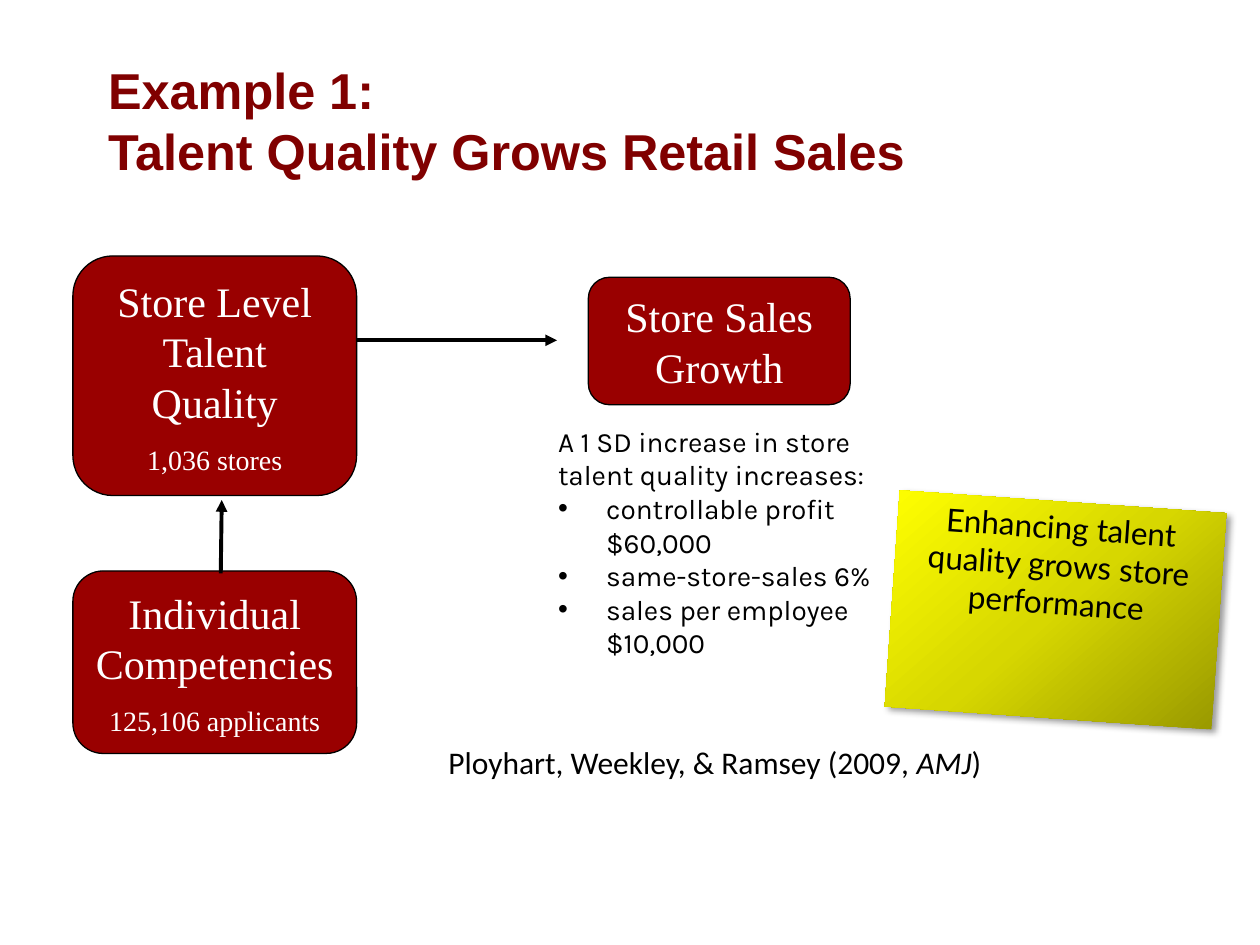
from lxml.etree import SubElement
from pptx import Presentation
from pptx.dml.color import RGBColor
from pptx.enum.shapes import MSO_CONNECTOR, MSO_SHAPE
from pptx.enum.text import MSO_ANCHOR, PP_ALIGN
from pptx.oxml import parse_xml
from pptx.oxml.ns import nsdecls, qn
from pptx.util import Cm, Pt

COLORS = {"title": "800000", "box": "990000", "light": "FFFFFF", "dark": "000000",
          "note_dark": "979700", "note_mid": "D7D700", "note_light": "FFFF00"}
FORMATS = {
    "title": {"name": "Arial", "size": Pt(28.8), "bold": True},
    "box": {"name": "Times New Roman", "size": Pt(24)},
    "sample": {"name": "Times New Roman", "size": Pt(16)},
    "effects": {"name": "Karla", "size": Pt(16)},
    "note": {"name": "Lato", "size": Pt(18)},
    "source": {"name": "Calibri", "size": Pt(18)},
    "journal": {"name": "Calibri", "size": Pt(18), "italic": True},
}


def add_run(paragraph, text, style, color):
    run = paragraph.add_run()
    run.text = text
    for attribute, value in FORMATS[style].items():
        setattr(run.font, attribute, value)
    run.font.color.rgb = RGBColor.from_string(COLORS[color])


def add_text_box(left, top, width, height, wrap=True):
    frame = slide.shapes.add_textbox(Cm(left), Cm(top), Cm(width), Cm(height)).text_frame
    frame.word_wrap = wrap
    return frame


prs = Presentation()
prs.slide_width, prs.slide_height = Cm(25.4), Cm(19.05)
slide = prs.slides.add_slide(prs.slide_layouts[6])

# Title
heading = add_text_box(1.93, 1.07, 22.91, 1.96).paragraphs[0]
for number, line in enumerate(["Example 1:", "Talent Quality Grows Retail Sales"]):
    if number:
        heading.add_line_break()
    add_run(heading, line, "title", "title")

# Model boxes, each with an optional sample size
model = [
    (1.47, 11.51, 5.72, 3.68, "Individual Competencies", "125,106 applicants"),
    (1.47, 5.16, 5.72, 4.83, "Store Level Talent Quality", "1,036 stores"),
    (11.86, 5.59, 5.28, 2.57, "Store Sales Growth", None),
]
for left, top, width, height, concept, sample in model:
    box = slide.shapes.add_shape(MSO_SHAPE.FLOWCHART_ALTERNATE_PROCESS,
                                 Cm(left), Cm(top), Cm(width), Cm(height))
    box.shadow.inherit = False
    box.fill.solid()
    box.fill.fore_color.rgb = RGBColor.from_string(COLORS["box"])
    box.line.color.rgb = RGBColor.from_string(COLORS["dark"])
    box.line.width = Pt(0.75)
    frame = box.text_frame
    frame.word_wrap = True
    frame.vertical_anchor = MSO_ANCHOR.MIDDLE
    frame.paragraphs[0].alignment = PP_ALIGN.CENTER
    add_run(frame.paragraphs[0], concept, "box", "light")
    if sample:
        sample_line = frame.add_paragraph()
        sample_line.alignment = PP_ALIGN.CENTER
        sample_line.space_before = Pt(9)
        add_run(sample_line, sample, "sample", "light")

# Arrows between the boxes
for x1, y1, x2, y2 in [(7.19, 6.86, 11.23, 6.86), (4.45, 11.56, 4.47, 10.08)]:
    arrow = slide.shapes.add_connector(MSO_CONNECTOR.STRAIGHT, Cm(x1), Cm(y1), Cm(x2), Cm(y2))
    arrow.line.color.rgb = RGBColor.from_string(COLORS["dark"])
    arrow.line.width = Pt(2.25)
    SubElement(arrow.line._get_or_add_ln(), qn("a:tailEnd"), type="triangle")
    SubElement(arrow._element.spPr, qn("a:effectLst"))

# Effects of talent quality
effects = add_text_box(11, 8.43, 6.99, 5.05)
add_run(effects.paragraphs[0], "A 1 SD increase in store talent quality increases:",
        "effects", "dark")
for effect in ["controllable profit $60,000", "same-store-sales 6%",
               "sales per employee $10,000"]:
    bullet_line = effects.add_paragraph()
    properties = bullet_line._p.get_or_add_pPr()
    properties.set("marL", str(Cm(0.97)))
    properties.set("indent", str(-Cm(0.97)))
    SubElement(properties, qn("a:buFont"), typeface="Arial")
    SubElement(properties, qn("a:buChar"), char="•")
    add_run(bullet_line, effect, "effects", "dark")

# Sticky note with gradient and soft shadow
note = slide.shapes.add_shape(MSO_SHAPE.RECTANGLE, Cm(17.98), Cm(10.11), Cm(6.6), Cm(4.37))
note.rotation = 4
note.line.fill.background()
stops = "".join(
    f'<a:gs pos="{position * 1000}"><a:srgbClr val="{COLORS[shade]}"/></a:gs>'
    for position, shade in [(0, "note_dark"), (50, "note_mid"), (100, "note_light")])
note._element.spPr.insert(2, parse_xml(
    f'<a:gradFill {nsdecls("a")} rotWithShape="1"><a:gsLst>{stops}</a:gsLst>'
    f'<a:lin ang="{225 * 60000}" scaled="0"/></a:gradFill>'))
note._element.spPr.append(parse_xml(
    f'<a:effectLst {nsdecls("a")}><a:outerShdw blurRad="{Pt(4)}" dist="{Pt(3)}" '
    f'dir="{45 * 60000}" algn="tl" rotWithShape="0"><a:srgbClr val="{COLORS["dark"]}">'
    '<a:alpha val="40000"/></a:srgbClr></a:outerShdw></a:effectLst>'))
note.text_frame.word_wrap = True
note.text_frame.vertical_anchor = MSO_ANCHOR.TOP
message = note.text_frame.paragraphs[0]
message.alignment = PP_ALIGN.CENTER
add_run(message, "Enhancing talent quality grows store performance", "note", "dark")

# Source
citation = add_text_box(8.79, 14.86, 11.43, 1.02, wrap=False).paragraphs[0]
for part, style in [("Ployhart, Weekley, & Ramsey (2009, ", "source"),
                    ("AMJ", "journal"), (")", "source")]:
    add_run(citation, part, style, "dark")

prs.save("out.pptx")
